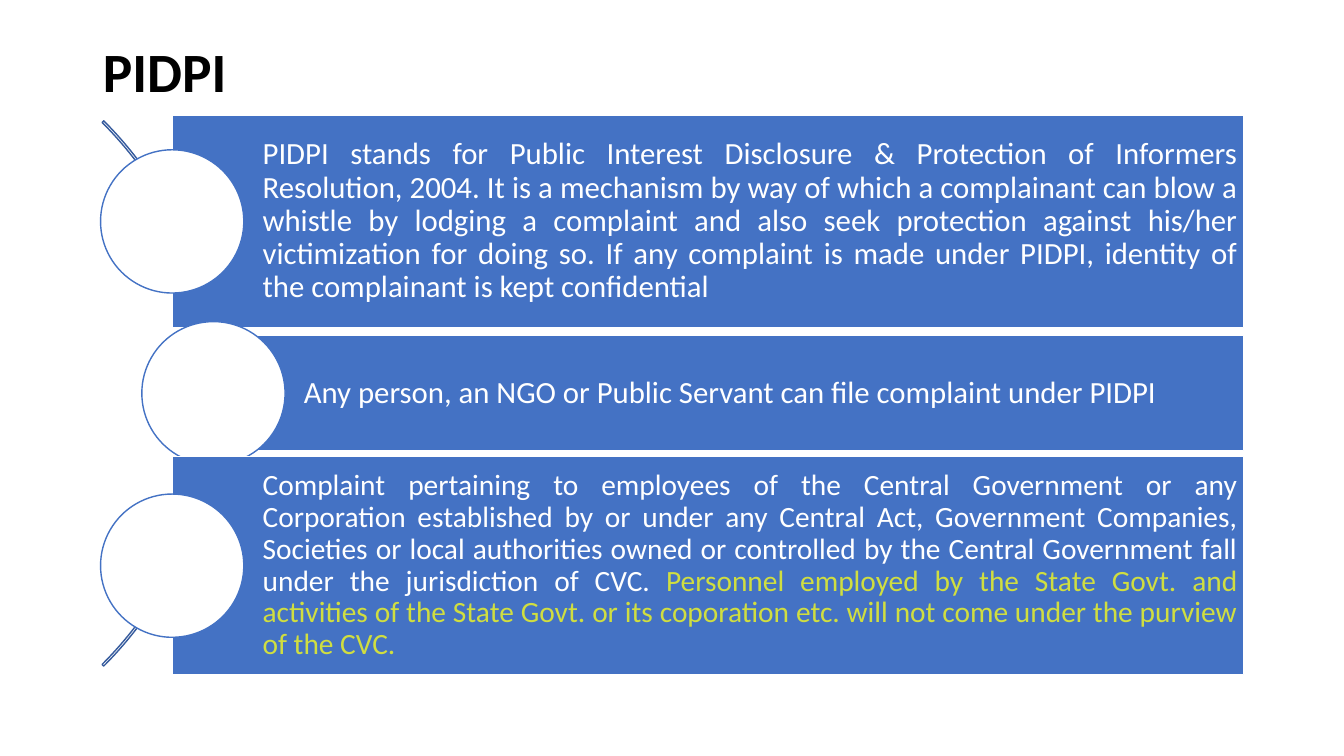
from pptx import Presentation
from pptx.dml.color import RGBColor
from pptx.enum.shapes import MSO_SHAPE
from pptx.enum.text import MSO_ANCHOR, MSO_AUTO_SIZE, PP_ALIGN
from pptx.util import Cm, Pt

BLUE, WHITE, BLACK = "4472C4", "FFFFFF", "000000"
NAVY, LIME = "365B9D", "D0DE40"
RIGHT, DISC = 31.34, 3.61

ITEMS = [
    (4.34, 2.9, 5.36, 22, [
        ("PIDPI stands for Public Interest Disclosure & Protection of Informers "
         "Resolution, 2004. It is a mechanism by way of which a complainant can "
         "blow a whistle by lodging a complaint and also seek protection against "
         "his/her victimization for doing so. If any complaint is made under "
         "PIDPI, identity of the complainant is kept confidential", WHITE)]),
    (5.38, 8.46, 2.9, 22, [
        ("Any person, an NGO or Public Servant can file complaint under PIDPI",
         WHITE)]),
    (4.34, 11.51, 5.49, 21, [
        ("Complaint pertaining to employees of the Central Government or any "
         "Corporation established by or under any Central Act, Government "
         "Companies, Societies or local authorities owned or controlled by the "
         "Central Government fall under the jurisdiction of CVC. ", WHITE),
        ("Personnel employed by the State Govt. and activities of the State "
         "Govt. or its coporation etc. will not come under the purview of the "
         "CVC.", LIME)]),
]


def paint(target, color):
    """Set a fill or font colour from a hex string."""
    target.rgb = RGBColor.from_string(color)


class Deck:
    """Holds the text style and the current slide."""

    def __init__(self, font):
        """Start a wide deck with one titled slide."""
        self.font = font
        self.file = Presentation()
        self.file.slide_width, self.file.slide_height = Cm(33.87), Cm(19.05)
        self.slide = self.file.slides.add_slide(self.file.slide_layouts[5])

    def label(self, frame, runs, size, align, bold=False):
        """Fill the first paragraph of a frame run by run."""
        frame.word_wrap = True
        frame.auto_size = MSO_AUTO_SIZE.NONE
        frame.vertical_anchor = MSO_ANCHOR.MIDDLE
        para = frame.paragraphs[0]
        para.alignment, para.line_spacing = align, 0.9
        for text, color in runs:
            run = para.add_run()
            run.text = text
            run.font.name, run.font.size, run.font.bold = self.font, Pt(size), bold
            paint(run.font.color, color)

    def title(self, text, left, top, width, height):
        """Place and format the title placeholder."""
        shape = self.slide.shapes.title
        shape.left, shape.top = Cm(left), Cm(top)
        shape.width, shape.height = Cm(width), Cm(height)
        self.label(shape.text_frame, [(text, BLACK)], 39.6, PP_ALIGN.LEFT, True)

    def shape(self, kind, left, top, width, height, fill, line):
        """Add a flat preset shape."""
        shape = self.slide.shapes.add_shape(
            kind, Cm(left), Cm(top), Cm(width), Cm(height))
        shape.shadow.inherit = False
        if fill:
            shape.fill.solid()
            paint(shape.fill.fore_color, fill)
        else:
            shape.fill.background()
        paint(shape.line.color, line)
        shape.line.width = Pt(1)
        return shape

    def arc(self, left, top, size):
        """Add the thin curve behind the discs."""
        shape = self.shape(MSO_SHAPE.BLOCK_ARC, left, top, size, size, None, NAVY)
        for index, value in enumerate((189, 27, 0.003)):
            shape.adjustments[index] = value

    def item(self, left, top, height, size, runs):
        """Add a text bar with a disc centred on its left edge."""
        bar = self.shape(MSO_SHAPE.RECTANGLE, left, top, RIGHT - left, height,
                         BLUE, WHITE)
        frame = bar.text_frame
        frame.margin_left = Cm(2.28)
        frame.margin_top = frame.margin_right = frame.margin_bottom = Cm(0.15)
        self.label(frame, runs, size, PP_ALIGN.JUSTIFY)
        self.shape(MSO_SHAPE.OVAL, left - DISC / 2, top + (height - DISC) / 2,
                   DISC, DISC, WHITE, BLUE)


def main():
    """Build and save the slide."""
    deck = Deck("Calibri")
    deck.title("PIDPI", 2.34, 1.02, 29.21, 1.73)
    deck.arc(-13.97, 0.2, 19.43)
    for item in ITEMS:
        deck.item(*item)
    deck.file.save("out.pptx")


if __name__ == "__main__":
    main()
